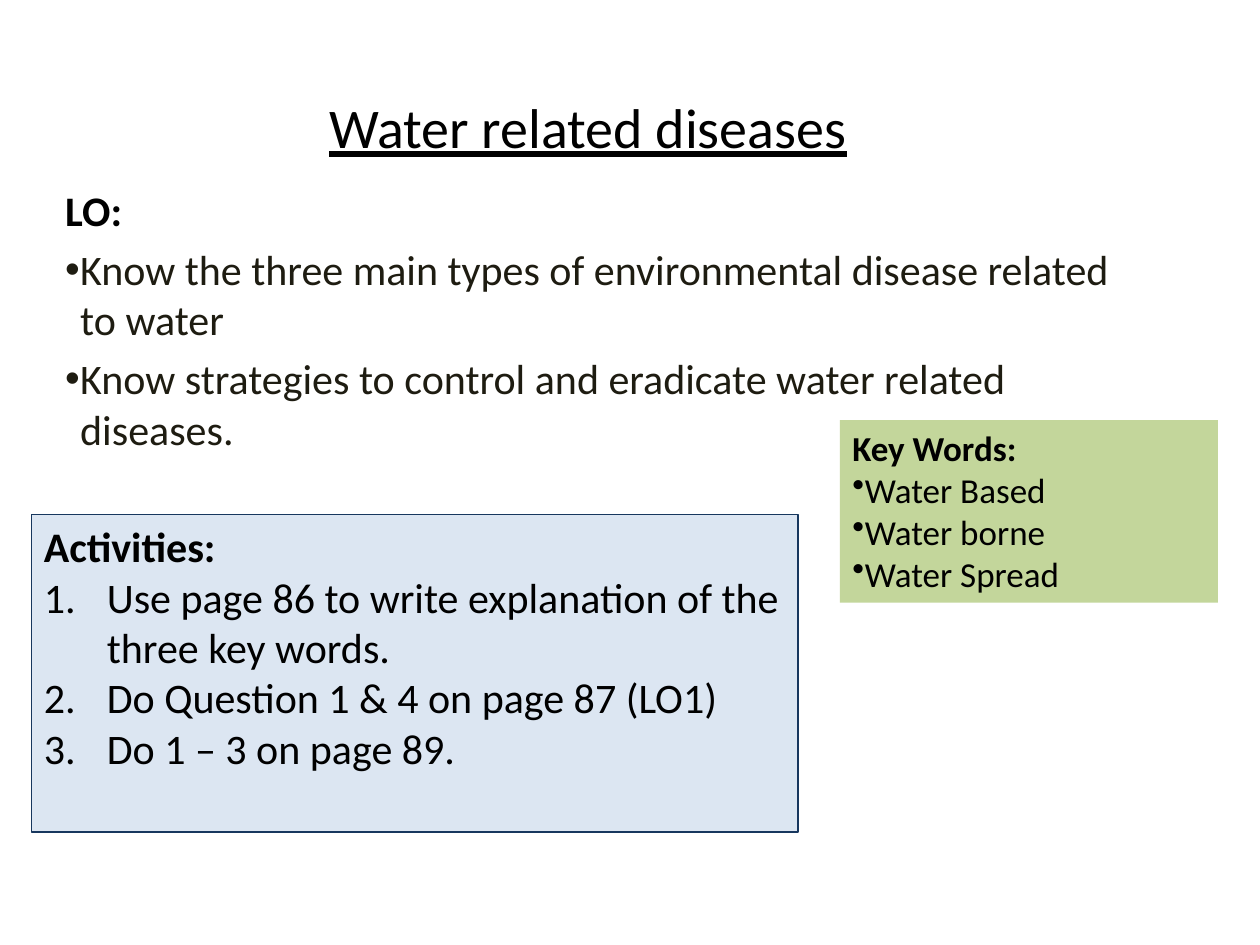
"""Build the lesson-opening slide on water related diseases."""
from dataclasses import dataclass

from lxml import etree
from pptx import Presentation, util as u
from pptx.dml.color import RGBColor
from pptx.enum import shapes, text
from pptx.oxml.ns import qn

BLACK = RGBColor(0x00, 0x00, 0x00)
DARK_BROWN = RGBColor(0x1E, 0x1C, 0x11)
PALE_BLUE = RGBColor(0xDC, 0xE6, 0xF2)
NAVY = RGBColor(0x17, 0x37, 0x5E)
GREEN = RGBColor(0xC3, 0xD6, 0x9B)
COLUMNS, ROWS = 120, 90
BULLET = ("buChar", {"char": "•"})
NUMBER = ("buAutoNum", {"type": "arabicPeriod"})


@dataclass(frozen=True)
class Area:
    """A place on the slide in grid columns and rows."""
    column: float
    row: float
    columns: float
    rows: float


@dataclass(frozen=True)
class Panel:
    """A filled box with a bold heading and a list."""
    area: Area
    fill: RGBColor
    line: RGBColor | None
    heading: str
    items: tuple[str, ...]
    marker: tuple[str, dict[str, str]]
    size: float
    indent: float = 0


PANELS = (
    Panel(Area(3, 49, 73, 30.25), PALE_BLUE, NAVY, "Activities:",
          ("Use page 86 to write explanation of the three key words.",
           "Do Question 1 & 4 on page 87 (LO1)",
           "Do 1 – 3 on page 89."), NUMBER, 24, 0.5),
    Panel(Area(80, 40, 36, 17.4), GREEN, None, "Key Words:",
          ("Water Based", "Water borne", "Water Spread"), BULLET, 20),
)
OBJECTIVES = (
    "Know the three main types of environmental disease related to water",
    "Know strategies to control and eradicate water related diseases.",
)


def grid_box(prs, area: Area) -> tuple[int, int, int, int]:
    """Turn grid units into left, top, width and height."""
    column, row = prs.slide_width / COLUMNS, prs.slide_height / ROWS
    return (round(area.column * column), round(area.row * row),
            round(area.columns * column), round(area.rows * row))


def place(prs, placeholder, area: Area, anchor) -> None:
    """Move a placeholder and fix how its text sits."""
    (placeholder.left, placeholder.top,
     placeholder.width, placeholder.height) = grid_box(prs, area)
    frame = placeholder.text_frame
    frame.auto_size = text.MSO_AUTO_SIZE.NONE
    frame.vertical_anchor = anchor


def write(frame, words: str, *, size: float, color=BLACK, bold=False,
          underline=False, align=text.PP_ALIGN.LEFT, marker=None,
          indent: float = 0, before: float = 0) -> None:
    """Add one formatted paragraph, filling the first one if it is empty."""
    paragraph = frame.paragraphs[0]
    if paragraph.runs:
        paragraph = frame.add_paragraph()
    if marker:
        tag, attributes = marker
        properties = paragraph._p.get_or_add_pPr()
        properties.set("marL", str(u.Inches(indent)))
        properties.set("indent", str(-u.Inches(indent)))
        etree.SubElement(properties, qn(f"a:{tag}"), attributes)
    paragraph.alignment = align
    paragraph.space_before = u.Pt(before)
    run = paragraph.add_run()
    run.text = words
    font = run.font
    font.name, font.size = "Calibri", u.Pt(size)
    font.bold, font.underline = bold, underline
    font.color.rgb = color


def draw_panel(prs, slide, panel: Panel) -> None:
    """Draw a panel with its heading and list."""
    box = slide.shapes.add_shape(shapes.MSO_SHAPE.RECTANGLE,
                                 *grid_box(prs, panel.area))
    box.shadow.inherit = False
    box.fill.solid()
    box.fill.fore_color.rgb = panel.fill
    if panel.line is None:
        box.line.fill.background()
    else:
        box.line.color.rgb = panel.line
        box.line.width = u.Pt(0.75)
    frame = box.text_frame
    frame.word_wrap = True
    frame.vertical_anchor = text.MSO_ANCHOR.TOP
    write(frame, panel.heading, size=panel.size, bold=True)
    for item in panel.items:
        write(frame, item, size=panel.size, marker=panel.marker,
              indent=panel.indent)


def main() -> None:
    """Build and save the slide."""
    prs = Presentation()
    prs.slide_width, prs.slide_height = u.Inches(10), u.Inches(7.5)
    slide = prs.slides.add_slide(prs.slide_layouts[0])

    title = slide.shapes.title
    place(prs, title, Area(5, 4, 102, 16), text.MSO_ANCHOR.MIDDLE)
    write(title.text_frame, "Water related diseases", size=32,
          underline=True, align=text.PP_ALIGN.CENTER)

    objectives = slide.placeholders[1]
    place(prs, objectives, Area(5, 17, 103, 23), text.MSO_ANCHOR.TOP)
    write(objectives.text_frame, "LO:", size=24, bold=True)
    for objective in OBJECTIVES:
        write(objectives.text_frame, objective, size=24, color=DARK_BROWN,
              marker=BULLET, indent=0.12, before=4.8)

    for panel in PANELS:
        draw_panel(prs, slide, panel)
    prs.save("out.pptx")


if __name__ == "__main__":
    main()
